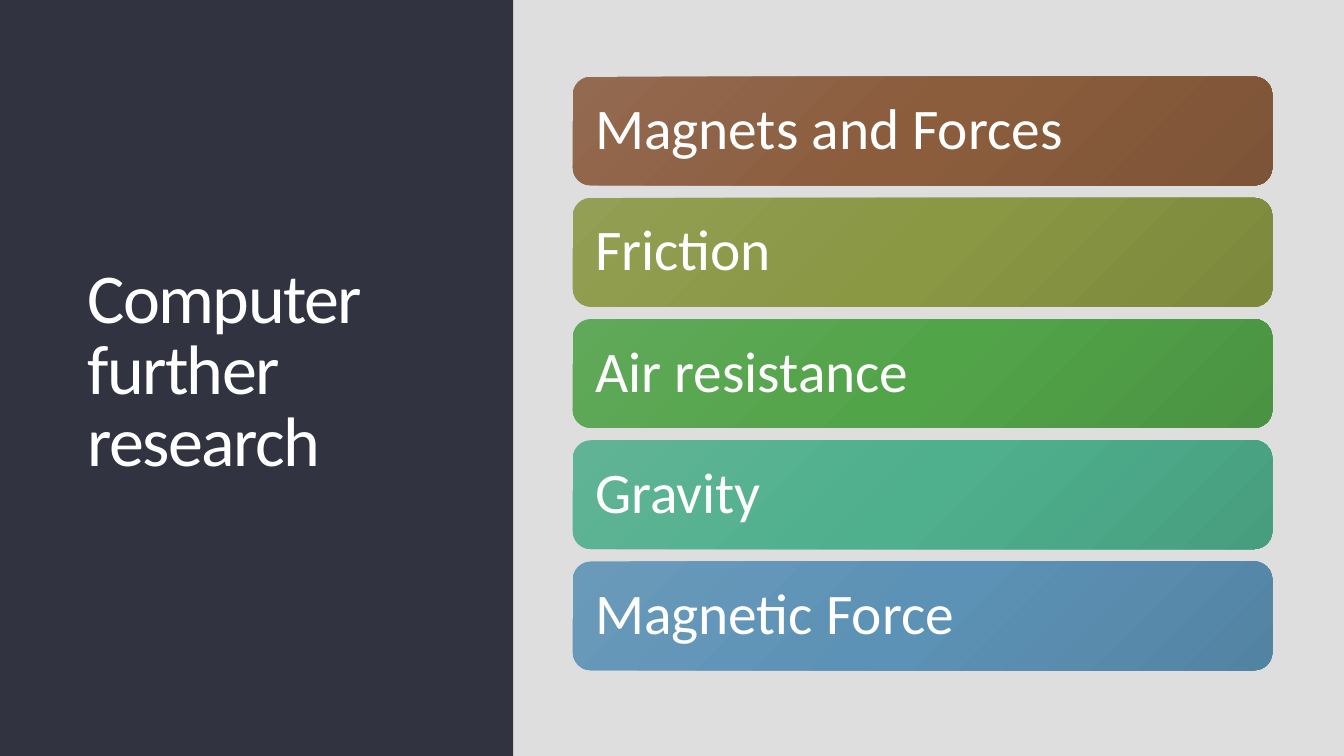
import copy

import pptx
import pptx.dml.color
import pptx.enum.shapes
import pptx.enum.text
import pptx.util

Inches = pptx.util.Inches
Pt = pptx.util.Pt
RGBColor = pptx.dml.color.RGBColor
MSO_SHAPE = pptx.enum.shapes.MSO_SHAPE

SLIDE_WIDTH, SLIDE_HEIGHT = 13.33, 7.5
PANEL_WIDTH = 5.09
BAR_LEFT, BAR_WIDTH, BAR_HEIGHT = 5.68, 6.94, 1.08
BARS_TOP, BARS_BOTTOM = 0.76, 6.65
FONT = "Calibri"

WHITE = RGBColor(0xFF, 0xFF, 0xFF)
BACKGROUND = RGBColor(0xDE, 0xDE, 0xDE)
PANEL = RGBColor(0x32, 0x33, 0x41)
BROWN = (RGBColor(0x93, 0x69, 0x50), RGBColor(0x8B, 0x5D, 0x3D), RGBColor(0x7D, 0x54, 0x37))
OLIVE = (RGBColor(0x92, 0x9F, 0x54), RGBColor(0x8A, 0x97, 0x43), RGBColor(0x7C, 0x88, 0x3C))
GREEN = (RGBColor(0x61, 0xA9, 0x5A), RGBColor(0x52, 0xA4, 0x49), RGBColor(0x4A, 0x93, 0x42))
TEAL = (RGBColor(0x60, 0xB4, 0x95), RGBColor(0x4F, 0xB0, 0x8E), RGBColor(0x47, 0x9E, 0x7F))
BLUE = (RGBColor(0x6A, 0x9A, 0xBA), RGBColor(0x5C, 0x92, 0xB5), RGBColor(0x53, 0x83, 0xA3))

TOPICS = [
    ("Magnets and Forces", BROWN),
    ("Friction", OLIVE),
    ("Air resistance", GREEN),
    ("Gravity", TEAL),
    ("Magnetic Force", BLUE),
]


def add_plain_shape(slide, kind, left, top, width, height):
    """Add a preset shape without line or shadow, measured in inches."""
    shape = slide.shapes.add_shape(
        kind, Inches(left), Inches(top), Inches(width), Inches(height))
    shape.shadow.inherit = False
    shape.line.fill.background()
    return shape


def fill_with_gradient(shape, colors):
    """Fill from top left to bottom right with three evenly spaced colours."""
    shape.fill.gradient()
    shape.fill.gradient_angle = 315
    stop_list = shape.fill._fill._gradFill.gsLst
    stop_list.insert(1, copy.deepcopy(stop_list[0]))
    for index, (stop, color) in enumerate(zip(shape.fill.gradient_stops, colors)):
        stop.position = index / 2
        stop.color.rgb = color


def write_text(shape, text, size, line_spacing):
    """Write one left-aligned, vertically centred paragraph and return its run."""
    frame = shape.text_frame
    frame.word_wrap = True
    frame.vertical_anchor = pptx.enum.text.MSO_ANCHOR.MIDDLE
    paragraph = frame.paragraphs[0]
    paragraph.alignment = pptx.enum.text.PP_ALIGN.LEFT
    paragraph.line_spacing = line_spacing
    run = paragraph.add_run()
    run.text = text
    run.font.size = Pt(size)
    run.font.name = FONT
    run.font.color.rgb = WHITE
    return run


def add_title_panel(slide, title):
    panel = add_plain_shape(slide, MSO_SHAPE.RECTANGLE, 0, 0, PANEL_WIDTH, SLIDE_HEIGHT)
    panel.fill.solid()
    panel.fill.fore_color.rgb = PANEL
    title_box = slide.shapes.add_textbox(
        Inches(0.77), Inches(0.7), Inches(3.91), Inches(6.01))
    run = write_text(title_box, title, 50, 0.85)
    run.font._element.set("spc", "-120")


def add_topic_bar(slide, top, topic, colors):
    bar = add_plain_shape(
        slide, MSO_SHAPE.ROUNDED_RECTANGLE, BAR_LEFT, top, BAR_WIDTH, BAR_HEIGHT)
    fill_with_gradient(bar, colors)
    frame = bar.text_frame
    frame.margin_left = frame.margin_right = Inches(0.17)
    frame.margin_top = frame.margin_bottom = Inches(0.17)
    write_text(bar, topic, 41, 0.9)


def main():
    presentation = pptx.Presentation()
    presentation.slide_width = Inches(SLIDE_WIDTH)
    presentation.slide_height = Inches(SLIDE_HEIGHT)
    slide = presentation.slides.add_slide(presentation.slide_layouts[6])
    slide.background.fill.solid()
    slide.background.fill.fore_color.rgb = BACKGROUND

    add_title_panel(slide, "Computer further research")
    row_step = (BARS_BOTTOM - BARS_TOP - BAR_HEIGHT) / (len(TOPICS) - 1)
    for row, (topic, colors) in enumerate(TOPICS):
        add_topic_bar(slide, BARS_TOP + row * row_step, topic, colors)

    presentation.save("out.pptx")


if __name__ == "__main__":
    main()
